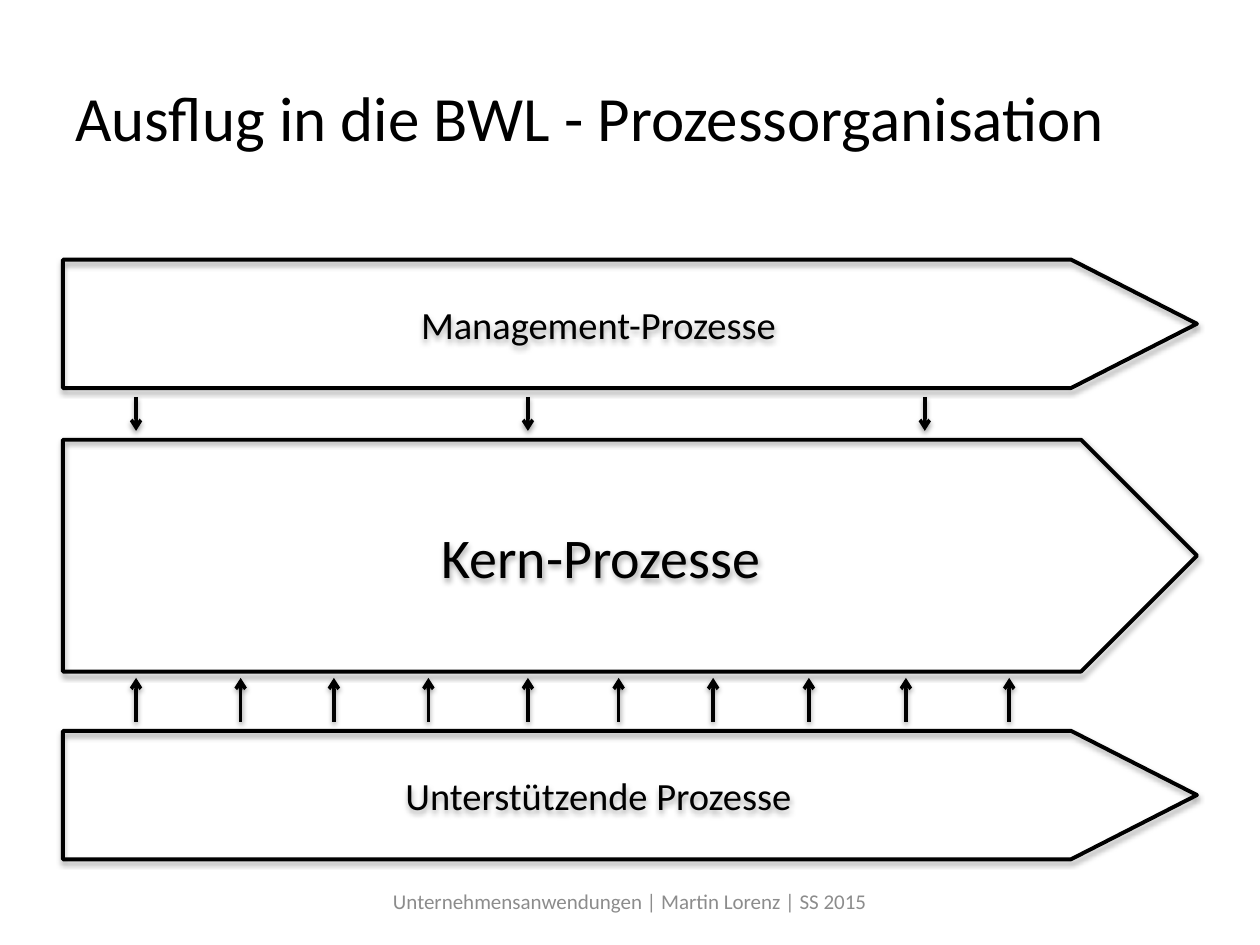
from lxml import etree
from pptx import Presentation
from pptx import util as u
from pptx.dml.color import RGBColor
from pptx.enum import shapes, text
from pptx.oxml import parse_xml
from pptx.oxml.ns import nsdecls, qn

BLACK = RGBColor(0x00, 0x00, 0x00)
GREY = RGBColor(0x8C, 0x8C, 0x8C)
FONT = "Calibri"
LEFT, WIDTH = 0.5, 9
DOWN_ARROWS = (0.58, 3.69, 6.84)
UP_ARROWS = (0.58, 1.41, 2.15, 2.9, 3.69, 4.41, 5.16, 5.92, 6.69, 7.51)


def write_text(shape, words, size, color, align):
    """Put one vertically centred line of text into a shape."""
    frame = shape.text_frame
    frame.word_wrap = True
    frame.vertical_anchor = text.MSO_ANCHOR.MIDDLE
    para = frame.paragraphs[0]
    para.alignment = align
    span = para.add_run()
    span.text = words
    span.font.name = FONT
    span.font.size = u.Pt(size)
    span.font.color.rgb = color


def cast_shadow(shape, distance, opacity):
    """Give a shape a soft black shadow straight below it."""
    shape._element.spPr.append(parse_xml(
        f'<a:effectLst {nsdecls("a")}>'
        f'<a:outerShdw blurRad="{u.Pt(3.1)}" dist="{u.Pt(distance)}" '
        f'dir="5400000" rotWithShape="0"><a:srgbClr val="{BLACK}">'
        f'<a:alpha val="{opacity * 1000}"/></a:srgbClr>'
        '</a:outerShdw></a:effectLst>'))


def add_label(page, box, words, size, color, align):
    """Add a text box that fills the given box."""
    label = page.shapes.add_textbox(*map(u.Inches, box))
    write_text(label, words, size, color, align)


def add_process(page, box, words, size, point=0.5):
    """Add an outlined process band whose point is relative to its height."""
    band = page.shapes.add_shape(shapes.MSO_SHAPE.PENTAGON, *map(u.Inches, box))
    band.adjustments[0] = point
    band.fill.background()
    band.line.color.rgb = BLACK
    band.line.width = u.Pt(2.25)
    cast_shadow(band, 1.8, 35)
    write_text(band, words, size, BLACK, text.PP_ALIGN.CENTER)


def add_arrows(page, box, offsets, upward=False):
    """Add a row of vertical arrows as tall as the box, at offsets from its left."""
    left, top, _, height = box
    start, end = (top + height, top) if upward else (top, top + height)
    for offset in offsets:
        x = left + offset
        arrow = page.shapes.add_connector(
            shapes.MSO_CONNECTOR.STRAIGHT, *map(u.Inches, (x, start, x, end)))
        arrow.line.color.rgb = BLACK
        arrow.line.width = u.Pt(2)
        etree.SubElement(arrow.line._get_or_add_ln(), qn("a:tailEnd"), type="arrow")
        cast_shadow(arrow, 1.6, 38)


def main():
    """Build the process organisation slide."""
    deck = Presentation()
    deck.slide_width, deck.slide_height = u.Inches(10), u.Inches(7.5)
    page = deck.slides.add_slide(deck.slide_layouts[6])
    add_label(page, (LEFT, 0.3, WIDTH, 1.25),
              "Ausflug in die BWL - Prozessorganisation", 36, BLACK,
              text.PP_ALIGN.LEFT)
    add_process(page, (LEFT, 2.06, WIDTH, 1.02), "Management-Prozesse", 22, 0.98)
    add_arrows(page, (LEFT, 3.15, WIDTH, 0.27), DOWN_ARROWS)
    add_process(page, (LEFT, 3.49, WIDTH, 1.84), "Kern-Prozesse", 32)
    add_arrows(page, (LEFT, 5.38, WIDTH, 0.35), UP_ARROWS, upward=True)
    add_process(page, (LEFT, 5.8, WIDTH, 1.02), "Unterstützende Prozesse", 22, 0.98)
    add_label(page, (0.75, 6.95, 8.5, 0.4),
              "Unternehmensanwendungen | Martin Lorenz | SS 2015", 12, GREY,
              text.PP_ALIGN.CENTER)
    deck.save("out.pptx")


if __name__ == "__main__":
    main()
